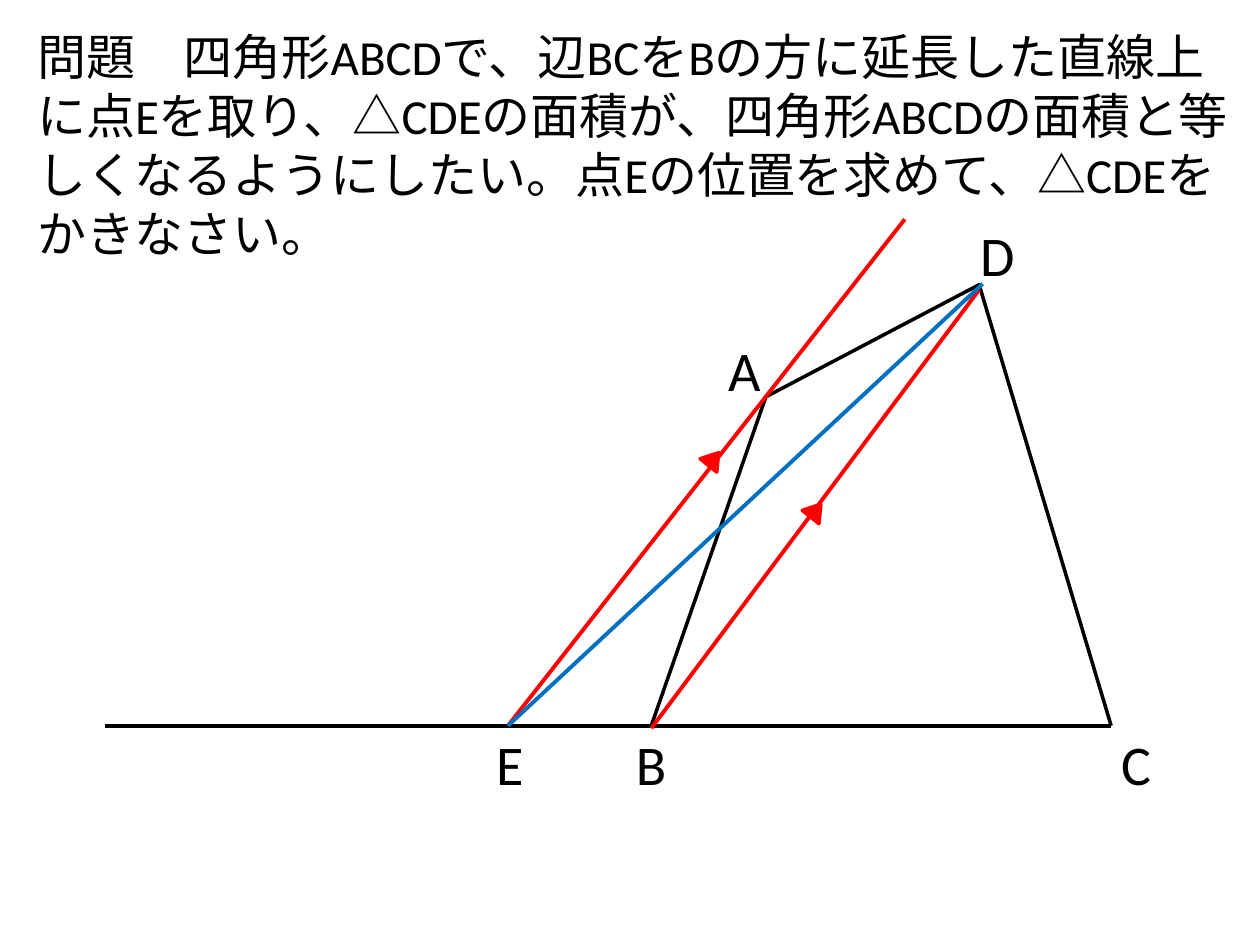
from lxml import etree
from pptx import Presentation
from pptx.dml.color import RGBColor
from pptx.enum.lang import MSO_LANGUAGE_ID as Language
from pptx.enum.shapes import MSO_CONNECTOR as Connector, MSO_SHAPE as Shape
from pptx.enum.text import MSO_AUTO_SIZE as AutoSize
from pptx.oxml.ns import qn
from pptx.util import Cm, Pt

COLORS = {"ink": "000000", "parallel": "FF0000", "answer": "0070C0"}
QUESTION = (
    "問題　四角形ABCDで、辺BCをBの方に延長した直線上に点Eを取り、"
    "△CDEの面積が、四角形ABCDの面積と等しくなるようにしたい。"
    "点Eの位置を求めて、△CDEをかきなさい。"
)

deck = Presentation()
deck.slide_width, deck.slide_height = Cm(25.4), Cm(19.05)
page = deck.slides.add_slide(deck.slide_layouts[6])


def add_text(text, left, top, width, height, size, wrap):
    box = page.shapes.add_textbox(Cm(left), Cm(top), Cm(width), Cm(height))
    box.text_frame.word_wrap = wrap
    box.text_frame.auto_size = AutoSize.SHAPE_TO_FIT_TEXT
    para = box.text_frame.paragraphs[0]
    span = para.add_run()
    span.text = text
    span.font.size = Pt(size)
    span.font.name = "Calibri"
    span.font.language_id = Language.JAPANESE
    span.font.color.rgb = RGBColor.from_string(COLORS["ink"])


def add_line(start, end, color):
    line = page.shapes.add_connector(Connector.STRAIGHT, *map(Cm, start + end))
    line.line.color.rgb = RGBColor.from_string(COLORS[color])
    line.line.width = Pt(2.25)
    etree.SubElement(line._element.spPr, qn("a:effectLst"))


base_y = 14.63
point_a, point_d = (15.44, 8.0), (19.74, 5.74)
point_b, point_c, point_e = (13.13, base_y), (22.4, base_y), (10.24, base_y)

add_text(QUESTION, 0.5, 0.42, 24.9, 3.84, 28, True)
add_line((2.11, base_y), point_c, "ink")

builder = page.shapes.build_freeform(*map(Cm, point_b))
builder.add_line_segments(
    [tuple(map(Cm, point)) for point in (point_a, point_d, point_c)], close=False
)
sides = builder.convert_to_shape()
sides.shadow.inherit = False
sides.fill.background()
sides.line.color.rgb = RGBColor.from_string(COLORS["ink"])
sides.line.width = Pt(2)

for start, end, color in (
    ((13.13, 14.68), (19.74, 5.84), "parallel"),
    (point_e, (18.24, 4.42), "parallel"),
    (point_e, (19.81, 5.72), "answer"),
):
    add_line(start, end, color)

for left, top in ((14.17, 9.09), (16.23, 10.13)):
    mark = page.shapes.add_shape(
        Shape.ISOSCELES_TRIANGLE, Cm(left), Cm(top), Cm(0.43), Cm(0.33)
    )
    mark.rotation = 38.7
    mark.shadow.inherit = False
    mark.fill.solid()
    mark.fill.fore_color.rgb = RGBColor.from_string(COLORS["parallel"])
    mark.line.color.rgb = RGBColor.from_string(COLORS["parallel"])
    mark.line.width = Pt(2)

for name, left, top, width in (
    ("A", 14.43, 6.63, 1.17),
    ("B", 12.57, 14.58, 1.14),
    ("C", 22.35, 14.58, 1.12),
    ("D", 19.51, 4.32, 1.22),
    ("E", 9.75, 14.58, 1.07),
):
    add_text(name, left, top, width, 1.62, 32, False)

deck.save("out.pptx")
